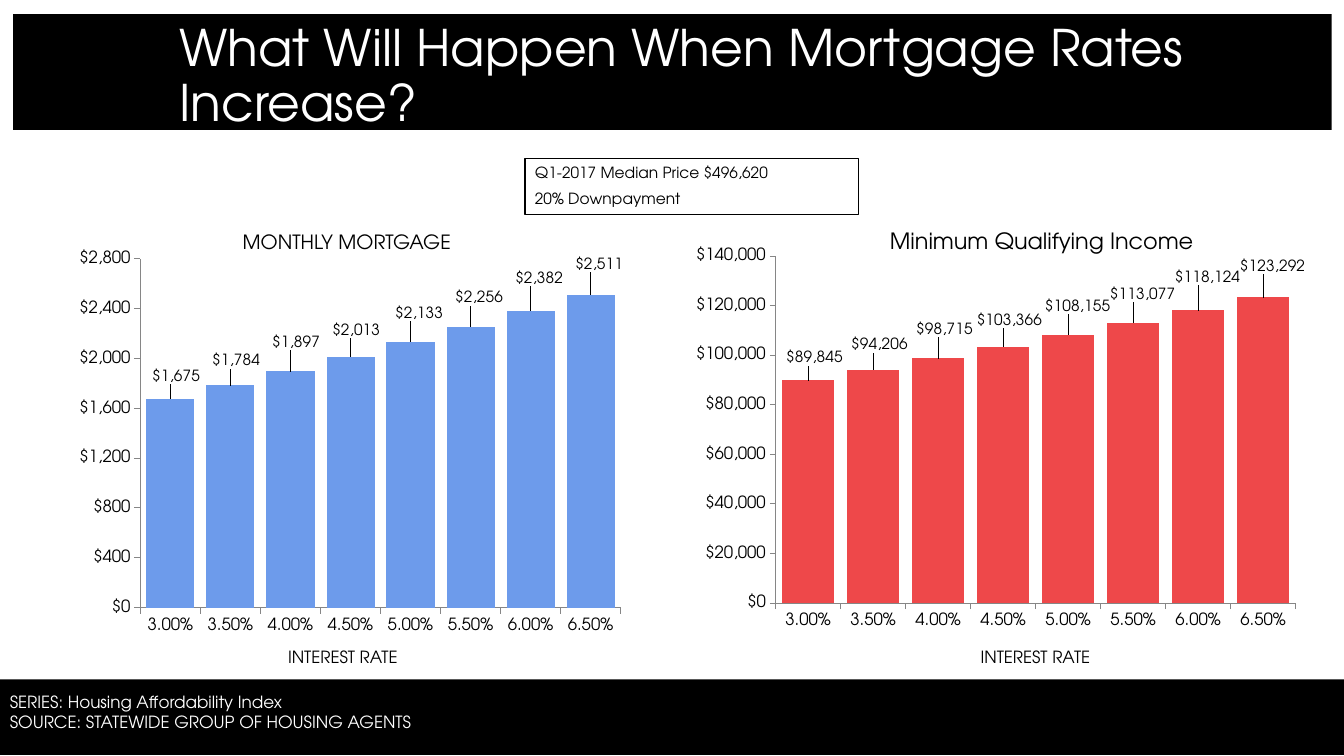
import dataclasses
import pptx
import pptx.chart.data
import pptx.dml.color
import pptx.enum.chart
import pptx.enum.shapes
import pptx.enum.text
import pptx.oxml
import pptx.oxml.ns
import pptx.util

Pt = pptx.util.Pt


@dataclasses.dataclass(frozen=True)
class Theme:
    """Hold the colours, font and type sizes of the slide."""
    font: str = "TeX Gyre Adventor"
    black: str = "000000"
    white: str = "FFFFFF"
    gray: str = "868686"
    blue: str = "6D9BEB"
    red: str = "EE484A"
    title: int = 36
    income: int = 16
    loan: int = 14
    text: int = 12
    small: int = 11


THEME = Theme()
RATES = [0.03 + 0.005 * step for step in range(8)]
SHIFT = [0.01] * 4 + [0.015] * 4
LIFT = [0.025, 0.03, 0.04, 0.035, 0.04, 0.04, 0.05, 0.045]
MONEY = '"$"#,##0'


def tint(name):
    """Turn a hex name into a colour."""
    return pptx.dml.color.RGBColor.from_string(name)


def style(font, size, color=THEME.black):
    """Set the face, size and colour of a font."""
    font.name = THEME.font
    font.size = Pt(size)
    font.bold = False
    font.color.rgb = tint(color)


def write(frame, lines, size, color=THEME.black, gap=0, lead=None):
    """Fill a text frame with one paragraph per line."""
    frame.word_wrap = True
    frame.vertical_anchor = pptx.enum.text.MSO_ANCHOR.TOP
    for i, line in enumerate(lines):
        para = frame.paragraphs[0] if i == 0 else frame.add_paragraph()
        para.alignment = pptx.enum.text.PP_ALIGN.LEFT
        if i and gap:
            para.space_before = Pt(gap)
        if lead:
            para.line_spacing = lead
        run = para.add_run()
        run.text = line
        style(run.font, size, color)


def label(slide, box, lines, size, color=THEME.black, lead=None):
    """Add a text box."""
    area = slide.shapes.add_textbox(*map(Pt, box))
    write(area.text_frame, lines, size, color, lead=lead)


def block(slide, box, fill, line=None):
    """Add a filled rectangle, with an outline if one is named."""
    kind = pptx.enum.shapes.MSO_SHAPE.RECTANGLE
    rect = slide.shapes.add_shape(kind, *map(Pt, box))
    rect.shadow.inherit = False
    rect.fill.solid()
    rect.fill.fore_color.rgb = tint(fill)
    if line:
        rect.line.color.rgb = tint(line)
        rect.line.width = Pt(0.75)
    else:
        rect.line.fill.background()
    return rect


def header(slide, box):
    """Draw the title band."""
    left, top, width, height = box
    block(slide, box, THEME.black)
    label(slide, (left + 111.6, top + 3, width - 123, 48),
          ["What Will Happen When Mortgage Rates Increase?"],
          THEME.title, THEME.white, 0.9)


def footer(slide, box):
    """Draw the source band."""
    left, top, width, height = box
    block(slide, box, THEME.black)
    label(slide, (left, top + 5, 321, 36),
          ["SERIES: Housing Affordability Index",
           "SOURCE: STATEWIDE GROUP OF HOUSING AGENTS"],
          THEME.text, THEME.white)


def note(slide, box):
    """Draw the box of assumptions."""
    rect = block(slide, box, THEME.white, THEME.black)
    write(rect.text_frame, ["Q1-2017 Median Price $496,620", "20% Downpayment"],
          THEME.small, gap=5.5)


def place(node, tag, **attrs):
    """Append a chart element with a set of attributes."""
    child = pptx.oxml.parse_xml(
        f'<c:{tag} {pptx.oxml.ns.nsdecls("c")}/>')
    for key, value in attrs.items():
        child.set(key, str(value))
    node.append(child)
    return child


def layout(x, y, size=None):
    """Build a manual layout for a plot area or a data label."""
    root = pptx.oxml.parse_xml(f'<c:layout {pptx.oxml.ns.nsdecls("c")}/>')
    man = place(root, "manualLayout")
    if size:
        place(man, "layoutTarget", val="inner")
        place(man, "xMode", val="edge")
        place(man, "yMode", val="edge")
    place(man, "x", val=x)
    place(man, "y", val=y)
    if size:
        place(man, "w", val=size[0])
        place(man, "h", val=size[1])
    return root


def tags(series):
    """Show the values above the columns, rising to the right."""
    spot = pptx.enum.chart.XL_LABEL_POSITION.OUTSIDE_END
    marks = series.data_labels
    marks.show_value = True
    marks.number_format = MONEY
    marks.number_format_is_linked = False
    marks.position = spot
    style(marks.font, THEME.small)
    for i in range(len(RATES)):
        mark = series.points[i].data_label
        style(mark.font, THEME.small)
        mark.position = spot
    for node, x, y in zip(series._element.xpath(".//c:dLbl"), SHIFT, LIFT):
        form = place(node, "numFmt", formatCode=MONEY, sourceLinked=0)
        node.insert(1, layout(x, -y))
        node.insert(2, form)


def panel(slide, box, head, size, start, foot, vals, color, top, step, plot):
    """Draw a heading, an axis caption and a column chart."""
    x, y, width, height = box
    label(slide, (x + start[0], y + start[1], 246, 26), [head], size)
    label(slide, (x + foot, 458.6, 138, 21.6), ["INTEREST RATE"], THEME.text)
    data = pptx.chart.data.CategoryChartData(number_format=MONEY)
    data.categories = [f"{rate:.2%}" for rate in RATES]
    data.add_series("Series 1", vals)
    kind = pptx.enum.chart.XL_CHART_TYPE.COLUMN_CLUSTERED
    chart = slide.shapes.add_chart(kind, *map(Pt, box), data).chart
    chart.has_legend = False
    chart.has_title = False
    style(chart.font, THEME.text)
    for axis in (chart.category_axis, chart.value_axis):
        axis.has_major_gridlines = False
        axis.major_tick_mark = pptx.enum.chart.XL_TICK_MARK.OUTSIDE
        axis.format.line.color.rgb = tint(THEME.gray)
        axis.format.line.width = Pt(0.75)
        style(axis.tick_labels.font, THEME.text)
    scale = chart.value_axis
    scale.minimum_scale, scale.maximum_scale = 0, top
    scale.major_unit = step
    scale.tick_labels.number_format = MONEY
    scale.tick_labels.number_format_is_linked = False
    cols = chart.plots[0]
    cols.gap_width = 25
    cols.vary_by_categories = False
    series = cols.series[0]
    series.format.fill.solid()
    series.format.fill.fore_color.rgb = tint(color)
    tags(series)
    area = chart._chartSpace.chart.plotArea
    for old in area.findall(pptx.oxml.ns.qn("c:layout")):
        area.remove(old)
    area.insert(0, layout(plot[0], plot[1], plot[2:]))


def main():
    """Build the slide and save it."""
    deck = pptx.Presentation()
    deck.slide_width, deck.slide_height = Pt(960), Pt(540)
    slide = deck.slides.add_slide(deck.slide_layouts[6])
    footer(slide, (0, 485.3, 960, 54))
    header(slide, (9.4, 10, 941.8, 82.8))
    note(slide, (375, 113, 238.3, 40.3))
    panel(slide, (42.5, 164.2, 413.3, 296.6), "MONTHLY MORTGAGE", THEME.loan,
          (123.8, -3.6), 156.2,
          [1675, 1784, 1897, 2013, 2133, 2256, 2382, 2511],
          THEME.blue, 2800, 400, (0.14, 0.07, 0.83, 0.84))
    panel(slide, (481.7, 162, 452.9, 298.8), "Minimum Qualifying Income",
          THEME.income, (146.9, -3), 211.7,
          [89845, 94206, 98715, 103366, 108155, 113077, 118124, 123292],
          THEME.red, 140000, 20000, (0.16, 0.07, 0.82, 0.83))
    deck.save("out.pptx")


if __name__ == "__main__":
    main()
